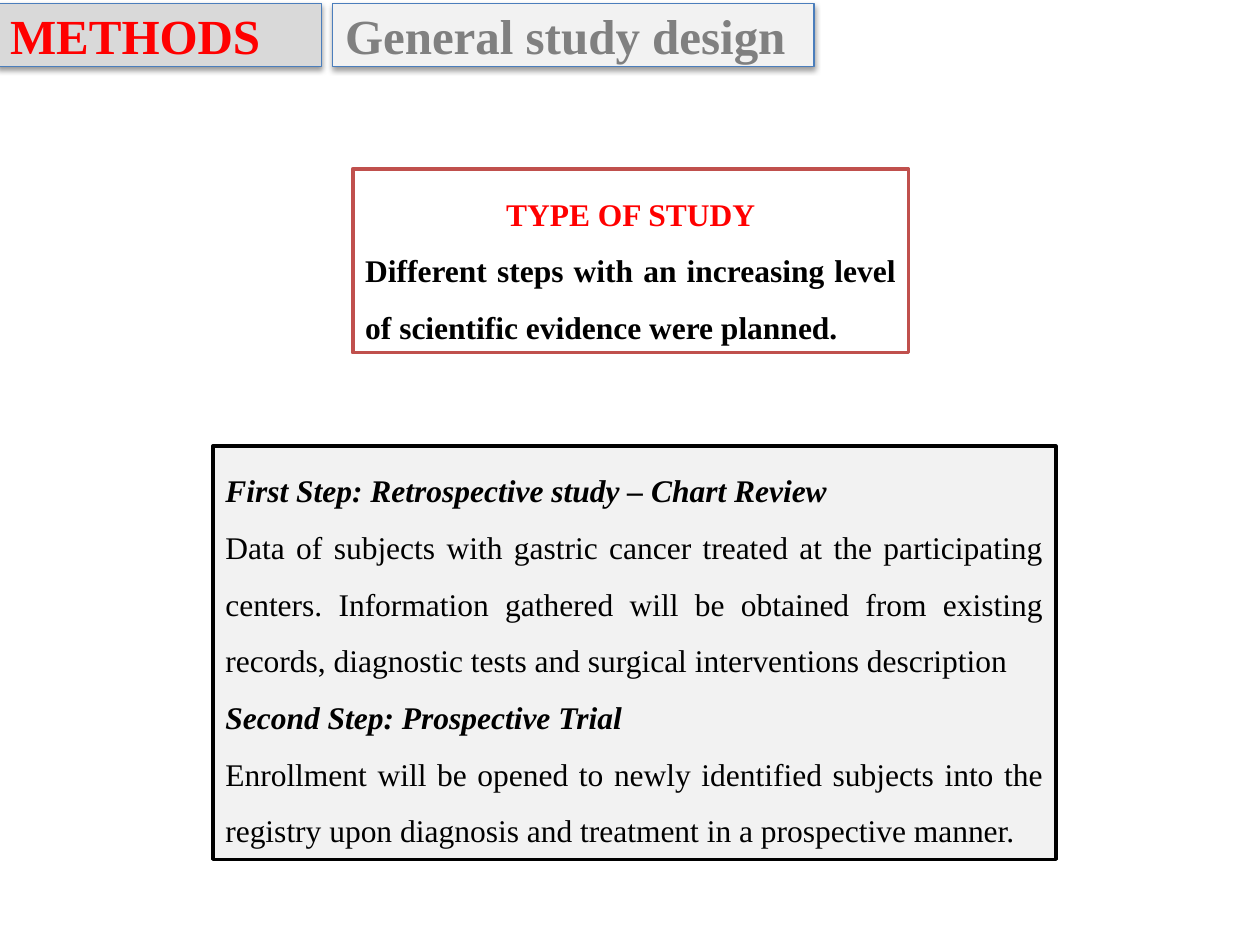
from lxml import etree
from pptx import Presentation
from pptx import util as u
from pptx.dml.color import RGBColor
from pptx.enum import shapes, text

HUES = {"red": "FF0000", "black": "000000", "gray": "808080", "white": "FFFFFF",
        "silver": "D9D9D9", "pale": "F2F2F2", "blue": "4B7EBC", "brick": "C0504D"}
NS = "http://schemas.openxmlformats.org/drawingml/2006/main"
SHADE = (f'<a:effectLst xmlns:a="{NS}"><a:outerShdw blurRad="40000" dist="20000" '
         f'dir="5400000" rotWithShape="0"><a:srgbClr val="{HUES["black"]}">'
         '<a:alpha val="38000"/></a:srgbClr></a:outerShdw></a:effectLst>')
LEFT, MID, JUST = text.PP_ALIGN.LEFT, text.PP_ALIGN.CENTER, text.PP_ALIGN.JUSTIFY
TOP, CORE = text.MSO_ANCHOR.TOP, text.MSO_ANCHOR.MIDDLE

deck = Presentation()
deck.slide_width, deck.slide_height = u.Inches(10), u.Inches(7.5)
COL, ROW = deck.slide_width / 100, deck.slide_height / 75
slide = deck.slides.add_slide(deck.slide_layouts[5])


def style(box, area, fill, edge, width, anchor):
    """Place a box, given in columns and rows, and set its look."""
    x, y, w, h = area
    box.left, box.top = round(x * COL), round(y * ROW)
    box.width, box.height = round(w * COL), round(h * ROW)
    box.fill.solid()
    box.fill.fore_color.rgb = RGBColor.from_string(HUES[fill])
    box.line.color.rgb = RGBColor.from_string(HUES[edge])
    box.line.width = u.Pt(width)
    frame = box.text_frame
    frame.word_wrap = True
    frame.auto_size = text.MSO_AUTO_SIZE.NONE
    frame.vertical_anchor = anchor


def write(box, lines, size, gap):
    """Fill a box with lines of (words, alignment, hue, bold, italic)."""
    frame = box.text_frame
    for i, (words, align, hue, bold, slant) in enumerate(lines):
        para = frame.add_paragraph() if i else frame.paragraphs[0]
        para.alignment, para.line_spacing = align, gap
        run = para.add_run()
        run.text = words
        font = run.font
        font.name, font.size = "Times New Roman", u.Pt(size)
        font.bold, font.italic = bold, slant
        font.color.rgb = RGBColor.from_string(HUES[hue])


# Header tabs
title = slide.shapes.title
topic = slide.shapes.add_shape(shapes.MSO_SHAPE.RECTANGLE, 0, 0, 0, 0)
tabs = [
    (title, (-0.2, 0.3, 25.7, 5), "silver", ("METHODS", LEFT, "red", True, False)),
    (topic, (26.4, 0.3, 38.2, 5), "pale",
     ("General study design", JUST, "gray", True, False)),
]
for tab, area, fill, line in tabs:
    style(tab, area, fill, "blue", 0.75, CORE)
    tab._element.spPr.append(etree.fromstring(SHADE))
    write(tab, [line], 28, 1.0)

# Study type and steps
panels = [
    ((28, 13.4, 44.1, 14.6), "white", "brick", CORE, [
        ("TYPE OF STUDY", MID, "red", True, False),
        ("Different steps with an increasing level of scientific evidence "
         "were planned.", JUST, "black", True, False),
    ]),
    ((16.9, 35.4, 66.9, 32.8), "pale", "black", TOP, [
        ("First Step: Retrospective study – Chart Review", JUST, "black", True, True),
        ("Data of subjects with gastric cancer treated at the participating centers. "
         "Information gathered will be obtained from existing records, diagnostic "
         "tests and surgical interventions description", JUST, "black", False, False),
        ("Second Step: Prospective Trial", JUST, "black", True, True),
        ("Enrollment will be opened to newly identified subjects into the registry "
         "upon diagnosis and treatment in a prospective manner.",
         JUST, "black", False, False),
    ]),
]
for area, fill, edge, anchor, lines in panels:
    panel = slide.shapes.add_shape(shapes.MSO_SHAPE.RECTANGLE, 0, 0, 0, 0)
    style(panel, area, fill, edge, 2, anchor)
    panel.shadow.inherit = False
    write(panel, lines, 18, 1.5)

deck.save("out.pptx")
